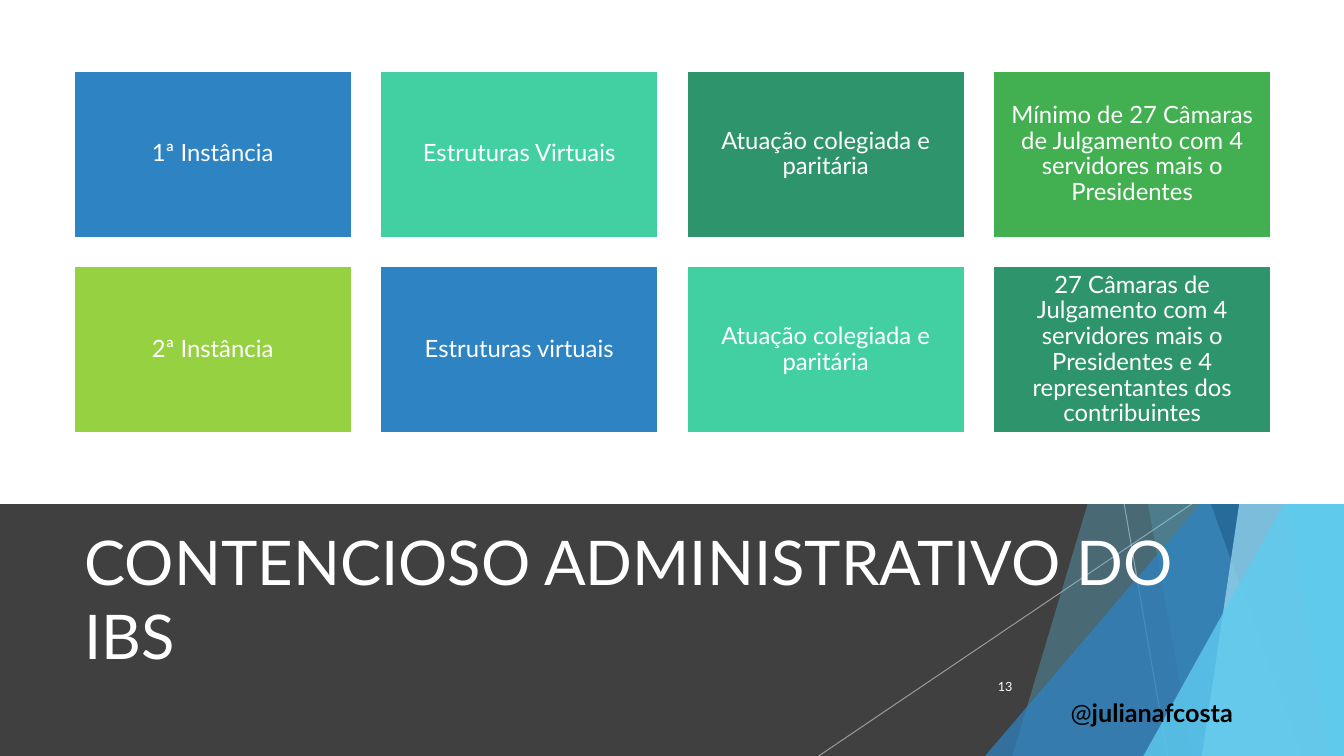
from dataclasses import dataclass

import pptx
import pptx.dml.color
import pptx.enum.shapes
import pptx.enum.text
import pptx.oxml
import pptx.oxml.ns
import pptx.util
from pptx.util import Inches

WIDTH, HEIGHT, BAND_TOP = 13.33, 7.5, 5
FONT = "Lato"
COLORS = {
    "white": "FFFFFF", "black": "000000", "charcoal": "404040", "grey": "BFBFBF",
    "blue": "2E83C3", "navy": "226292", "sky": "5FCBEF", "pale": "9FE0F5",
    "mint": "42D0A2", "teal": "2E946B", "green": "42B051", "lime": "96D141",
}
SHAPES = pptx.enum.shapes.MSO_SHAPE
ALIGN = pptx.enum.text.PP_ALIGN
ANCHOR = pptx.enum.text.MSO_ANCHOR


@dataclass
class Facet:
    """Full-height panel reaching the right edge, with a slanted left side."""
    top_x: float
    bottom_x: float
    color: str
    alpha: int


@dataclass
class Wedge:
    """Right triangle standing in the bottom right corner."""
    left: float
    top: float
    color: str
    alpha: int


@dataclass
class Ray:
    top_x: float
    bottom_x: float


@dataclass
class Card:
    text: str
    color: str


RAYS = [Ray(11.15, 11.58), Ray(11.82, 8.12)]
DECOR = [
    Facet(12.28, 10.04, "sky", 30),
    Facet(10.5, 11.83, "sky", 20),
    Wedge(9.77, 3.33, "blue", 72),
    Facet(10.21, 12.91, "navy", 70),
    Facet(13.03, 11.92, "pale", 70),
    Facet(11.96, 13.18, "sky", 65),
    Wedge(11.34, 3.93, "sky", 80),
]
CARD_ROWS = [
    [Card("1ª Instância", "blue"),
     Card("Estruturas Virtuais", "mint"),
     Card("Atuação colegiada e paritária", "teal"),
     Card("Mínimo de 27 Câmaras de Julgamento com 4 servidores mais o Presidentes", "green")],
    [Card("2ª Instância", "lime"),
     Card("Estruturas virtuais", "blue"),
     Card("Atuação colegiada e paritária", "mint"),
     Card("27 Câmaras de Julgamento com 4 servidores mais o Presidentes "
          "e 4 representantes dos contribuintes", "teal")],
]


def rgb(name: str) -> pptx.dml.color.RGBColor:
    return pptx.dml.color.RGBColor.from_string(COLORS[name])


def set_alpha(fill, percent: int) -> None:
    """Make the solid colour inside a fill or line element translucent."""
    color = next(fill.iter(pptx.oxml.ns.qn("a:srgbClr")))
    alpha = pptx.oxml.parse_xml(
        f'<a:alpha {pptx.oxml.ns.nsdecls("a")} val="{percent * 1000}"/>')
    color.append(alpha)


def paint(sp, color: str, alpha: int = 100) -> None:
    sp.shadow.inherit = False
    sp.fill.solid()
    sp.fill.fore_color.rgb = rgb(color)
    if alpha < 100:
        set_alpha(sp.element.spPr, alpha)
    sp.line.fill.background()


def add_rect(s, left: float, top: float, width: float, height: float, color: str):
    sp = s.shapes.add_shape(SHAPES.RECTANGLE, Inches(left), Inches(top),
                            Inches(width), Inches(height))
    paint(sp, color)
    return sp


def add_box(s, left: float, top: float, width: float, height: float):
    return s.shapes.add_textbox(Inches(left), Inches(top), Inches(width), Inches(height))


def add_text(sp, *texts: str, size: float, color: str = "white", align=ALIGN.LEFT,
             anchor=ANCHOR.MIDDLE, inset: float | None = None,
             spacing: float | None = None, bold_last: bool = False) -> None:
    """Write the texts as runs of one paragraph."""
    tf = sp.text_frame
    tf.word_wrap = True
    tf.vertical_anchor = anchor
    if inset is not None:
        tf.margin_left = tf.margin_right = Inches(inset)
        tf.margin_top = tf.margin_bottom = Inches(inset)
    p = tf.paragraphs[0]
    p.alignment = align
    p.line_spacing = spacing
    for text in texts:
        r = p.add_run()
        r.text = text
        r.font.name = FONT
        r.font.size = pptx.util.Pt(size)
        r.font.color.rgb = rgb(color)
        r.font.bold = bold_last and text == texts[-1]


def add_ray(s, ray: Ray) -> None:
    line = s.shapes.add_connector(
        pptx.enum.shapes.MSO_CONNECTOR.STRAIGHT,
        Inches(ray.top_x), Inches(BAND_TOP), Inches(ray.bottom_x), Inches(HEIGHT))
    line.line.color.rgb = rgb("grey")
    line.line.width = pptx.util.Pt(0.75)
    spPr = line.element.spPr
    set_alpha(spPr, 70)
    spPr.append(pptx.oxml.parse_xml(f'<a:effectLst {pptx.oxml.ns.nsdecls("a")}/>'))


def add_facet(s, facet: Facet) -> None:
    builder = s.shapes.build_freeform(Inches(facet.top_x), 0)
    builder.add_line_segments([(Inches(WIDTH), 0), (Inches(WIDTH), Inches(HEIGHT)),
                               (Inches(facet.bottom_x), Inches(HEIGHT))], close=True)
    paint(builder.convert_to_shape(), facet.color, facet.alpha)


def add_wedge(s, wedge: Wedge) -> None:
    sp = s.shapes.add_shape(SHAPES.ISOSCELES_TRIANGLE, Inches(wedge.left), Inches(wedge.top),
                            Inches(WIDTH - wedge.left), Inches(HEIGHT - wedge.top))
    sp.adjustments[0] = 1
    paint(sp, wedge.color, wedge.alpha)


def add_cards(s) -> None:
    width, height, gap = 2.76, 1.66, 0.28
    for row, cards in enumerate(CARD_ROWS):
        for col, card in enumerate(cards):
            sp = add_rect(s, 0.73 + col * (width + gap), 0.7 + row * (height + gap),
                          width, height, card.color)
            sp.line.color.rgb = rgb("white")
            sp.line.width = pptx.util.Pt(1.5)
            add_text(sp, card.text, size=17, align=ALIGN.CENTER, inset=0.07, spacing=0.9)


def main() -> None:
    prs = pptx.Presentation()
    prs.slide_width, prs.slide_height = Inches(WIDTH), Inches(HEIGHT)
    s = prs.slides.add_slide(prs.slide_layouts[6])

    # Dark band with translucent facets
    add_rect(s, 0, BAND_TOP, WIDTH, HEIGHT - BAND_TOP, "charcoal")
    for ray in RAYS:
        add_ray(s, ray)
    for part in DECOR:
        if isinstance(part, Facet):
            add_facet(s, part)
        else:
            add_wedge(s, part)

    # Title
    add_text(add_box(s, 0.74, 5.21, 11.64, 1.44), "CONTENCIOSO ADMINISTRATIVO DO IBS", size=44)

    # White upper area and its cards
    add_rect(s, 0, 0, WIDTH, BAND_TOP, "white")
    add_cards(s)

    # Page number and handle
    add_text(add_box(s, 9.39, 6.61, 0.75, 0.4), "13", size=9, align=ALIGN.RIGHT)
    add_text(add_box(s, 10.52, 6.87, 2.14, 0.4), "@", "julianafcosta", size=18,
             color="black", anchor=ANCHOR.TOP, bold_last=True)

    prs.save("out.pptx")


if __name__ == "__main__":
    main()
